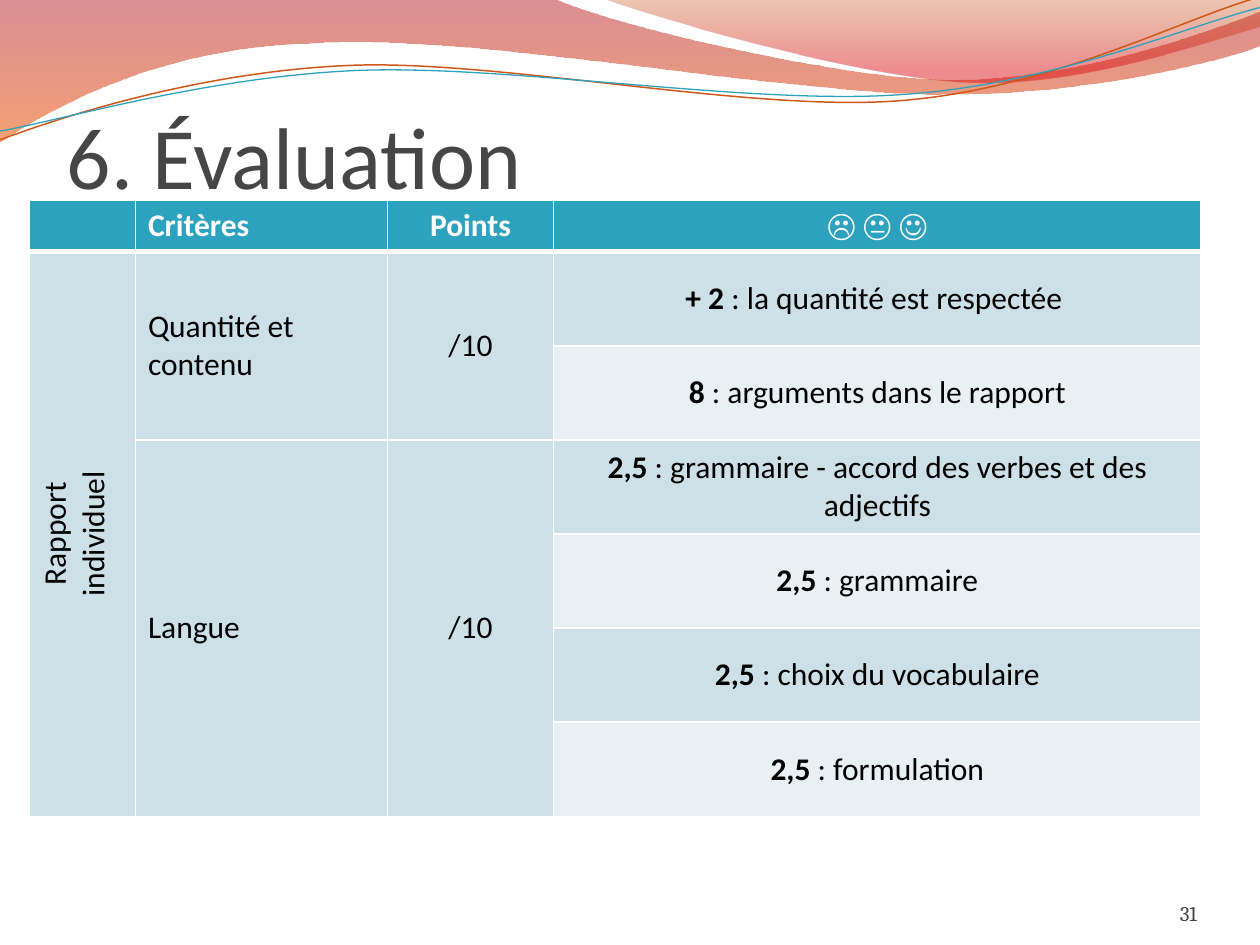
from math import cos, radians, sin

from lxml.etree import SubElement
from pptx import Presentation
from pptx.dml.color import RGBColor
from pptx.enum.text import MSO_ANCHOR as Anchor, PP_ALIGN as Align
from pptx.oxml.ns import qn
from pptx.util import Pt

WHITE = RGBColor(0xFF, 0xFF, 0xFF)
BLACK = RGBColor(0, 0, 0)
TEAL = RGBColor(0x2D, 0xA2, 0xBF)
ORANGE = RGBColor(0xCF, 0x58, 0x18)
DARK_RED = RGBColor(0xAF, 0x09, 0x11)
BRIGHT_ORANGE = RGBColor(0xEE, 0x53, 0x00)
RUST = RGBColor(0xC2, 0x44, 0x00)
RED = RGBColor(0xDC, 0x00, 0x0B)
BAND_DARK = RGBColor(0xCD, 0xE0, 0xE8)
BAND_LIGHT = RGBColor(0xE8, 0xF0, 0xF4)
TITLE_GRAY = RGBColor(0x46, 0x46, 0x46)
NUMBER_GRAY = RGBColor(0x43, 0x43, 0x43)

TILT = 2.7
BACK_WAVE = [
    [(0, 0)], [(316.8, -0.7)],
    [(342.7, 12.2), (478.1, 45.4), (545.8, 45.4)],
    [(614.2, 45.4), (689.8, 18.7), (720, 6.5)],
    [(720.7, 25.9)],
    [(707.8, 31.7), (626.4, 54.7), (537.1, 54)],
    [(447.8, 54), (275, 20.2), (185, 24.5)],
    [(92.9, 25.9), (33.1, 59.8), (-0.7, 81.4)],
    [(0, 0)],
]
FRONT_WAVE = [
    [(344.9, -0.7)],
    [(366.5, 7.9), (491, 44.6), (553.7, 46.8)],
    [(616.3, 49.7), (691.9, 23), (720, 15.1)],
    [(720, 0)], [(344.9, -0.7)],
]
ORANGE_CURVE = [
    [(0, 79.9)],
    [(34.6, 67), (113.8, 41), (199.4, 37.4)],
    [(284.4, 33.8), (427, 64.1), (513.4, 57.6)],
    [(599.8, 51.1), (675.4, 10.8), (718.6, -1.4)],
]
TEAL_CURVE = [
    [(0, 74.9)],
    [(33.8, 69.1), (118.1, 43.9), (203.8, 40.3)],
    [(290.2, 36.7), (429.8, 60.5), (516.2, 54)],
    [(601.9, 48.2), (677.5, 15.1), (720, 4.3)],
]

COLUMNS = [60.5, 144, 95, 370]
ROWS = [29.2] + [53.8] * 6
HEADERS = [[], [("Critères", "Calibri")], [("Points", "Calibri")],
           [("☹ 😐 ", "Calibri"), ("☺", "Cambria")]]
GROUPS = [(1, 6, 0, "Rapport\nindividuel"),
          (1, 2, 1, "Quantité et contenu"), (1, 2, 2, "/10"),
          (3, 6, 1, "Langue"), (3, 6, 2, "/10")]
DETAILS = [("+ 2", " : la quantité est respectée "),
           ("8", " : arguments dans le rapport"),
           ("2,5", " : grammaire - accord des verbes et des adjectifs"),
           ("2,5", " : grammaire"),
           ("2,5", " : choix du vocabulaire"),
           ("2,5", " : formulation")]


def set_attrs(obj, values):
    for name, value in values.items():
        setattr(obj, name, value)


def add_curve(s, segments, close):
    points = [(Pt(x), Pt(y)) for seg in segments for x, y in seg]
    builder = s.shapes.build_freeform(*points[0])
    builder.add_line_segments(points[1:], close=close)
    sp = builder.convert_to_shape()
    sp.shadow.inherit = False
    steps = iter(list(sp.element.iter(qn("a:lnTo"))))
    for seg in segments[1:]:
        parts = [next(steps) for _ in seg]
        if len(parts) == 3:
            bezier = parts[0]
            bezier.tag = qn("a:cubicBezTo")
            for part in parts[1:]:
                bezier.append(part[0])
                part.getparent().remove(part)
    return sp


def add_wave(s, segments, stops):
    sp = add_curve(s, segments, True)
    sp.line.fill.background()
    sp.fill.gradient()
    sp.fill.gradient_angle = 270
    for stop, (position, color, _) in zip(sp.fill.gradient_stops, stops):
        stop.position = position
        stop.color.rgb = color
    for clr, (_, _, opacity) in zip(sp.element.spPr.iter(qn("a:srgbClr")), stops):
        SubElement(clr, qn("a:alpha"), val=str(opacity * 1000))


def turn(point, center, angle):
    dx, dy = point[0] - center[0], point[1] - center[1]
    c, n = cos(radians(angle)), sin(radians(angle))
    return center[0] + dx * c - dy * n, center[1] + dx * n + dy * c


def add_line(s, segments, center, color, width):
    level = [[turn(point, center, TILT) for point in seg] for seg in segments]
    sp = add_curve(s, level, False)
    sp.rotation = 360 - TILT
    sp.fill.background()
    sp.line.color.rgb = color
    sp.line.width = Pt(width)


def write(tf, runs, align, size, color):
    p = tf.paragraphs[0]
    p.alignment = align
    for text, bold, font in runs:
        for i, part in enumerate(text.split("\n")):
            if i:
                p.add_line_break()
            r = p.add_run()
            r.text = part
            set_attrs(r.font, {"name": font, "size": Pt(size), "bold": bold})
            r.font.color.rgb = color


def format_frame(tf, top):
    set_attrs(tf, {"margin_left": 0, "margin_top": Pt(top), "margin_right": 0,
                   "margin_bottom": 0, "vertical_anchor": Anchor.BOTTOM,
                   "word_wrap": True})


def add_title(s, text):
    title = s.shapes.title
    s.shapes.element.append(title.element)
    set_attrs(title, {"left": Pt(38.2), "top": Pt(28.3), "width": Pt(648), "height": Pt(90)})
    format_frame(title.text_frame, 3.6)
    write(title.text_frame, [(text, False, "Calibri")], Align.LEFT, 50, TITLE_GRAY)


def add_number(s, text):
    tf = s.shapes.add_textbox(Pt(624), Pt(500.4), Pt(60), Pt(28.8)).text_frame
    format_frame(tf, 0)
    write(tf, [(text, False, "Cambria")], Align.RIGHT, 12, NUMBER_GRAY)


def add_borders(cell, widths):
    tc_pr = cell._tc.get_or_add_tcPr()
    for side, width in widths.items():
        ln = SubElement(tc_pr, qn(f"a:ln{side}"), w=str(Pt(width)))
        SubElement(SubElement(ln, qn("a:solidFill")), qn("a:srgbClr"), val=str(WHITE))


def fill_cells(table):
    for i in range(len(ROWS)):
        for j in range(len(COLUMNS)):
            cell = table.cell(i, j)
            if i == 0:
                add_borders(cell, {"L": 1, "R": 1, "T": 1, "B": 3})
            band = BAND_LIGHT if j == 3 and i % 2 == 0 else BAND_DARK
            cell.fill.solid()
            cell.fill.fore_color.rgb = band if i else TEAL


def add_criteria_table(s):
    table = s.shapes.add_table(len(ROWS), len(COLUMNS), Pt(16.9), Pt(114.6),
                               Pt(sum(COLUMNS)), Pt(sum(ROWS))).table
    for column, width in zip(table.columns, COLUMNS):
        column.width = Pt(width)
    for row, height in zip(table.rows, ROWS):
        row.height = Pt(height)
    fill_cells(table)
    for j, runs in enumerate(HEADERS):
        if runs:
            write(table.cell(0, j).text_frame, [(text, True, font) for text, font in runs],
                  Align.CENTER if j > 1 else Align.LEFT, 18, WHITE)
    for first, last, j, text in GROUPS:
        cell = table.cell(first, j)
        cell.merge(table.cell(last, j))
        cell.vertical_anchor = Anchor.MIDDLE
        write(cell.text_frame, [(text, False, "Calibri")],
              Align.LEFT if j == 1 else Align.CENTER, 18, BLACK)
    table.cell(1, 0)._tc.get_or_add_tcPr().set("vert", "vert270")
    for i, (points, text) in enumerate(DETAILS, 1):
        cell = table.cell(i, 3)
        cell.vertical_anchor = Anchor.MIDDLE
        write(cell.text_frame, [(points, True, "Calibri"), (text, False, "Calibri")],
              Align.CENTER, 18, BLACK)


def main():
    prs = Presentation()
    set_attrs(prs, {"slide_width": Pt(720), "slide_height": Pt(540)})
    s = prs.slides.add_slide(prs.slide_layouts[5])
    add_wave(s, BACK_WAVE, [(0, DARK_RED, 45), (1, BRIGHT_ORANGE, 55)])
    add_wave(s, FRONT_WAVE, [(0, RUST, 30), (0.8, RED, 45)])
    add_line(s, ORANGE_CURVE, (359.3, 41.4), ORANGE, 0.85)
    add_line(s, TEAL_CURVE, (359.6, 42.5), TEAL, 0.75)
    add_title(s, "6. Évaluation")
    add_criteria_table(s)
    add_number(s, "31")
    prs.save("out.pptx")


if __name__ == "__main__":
    main()
